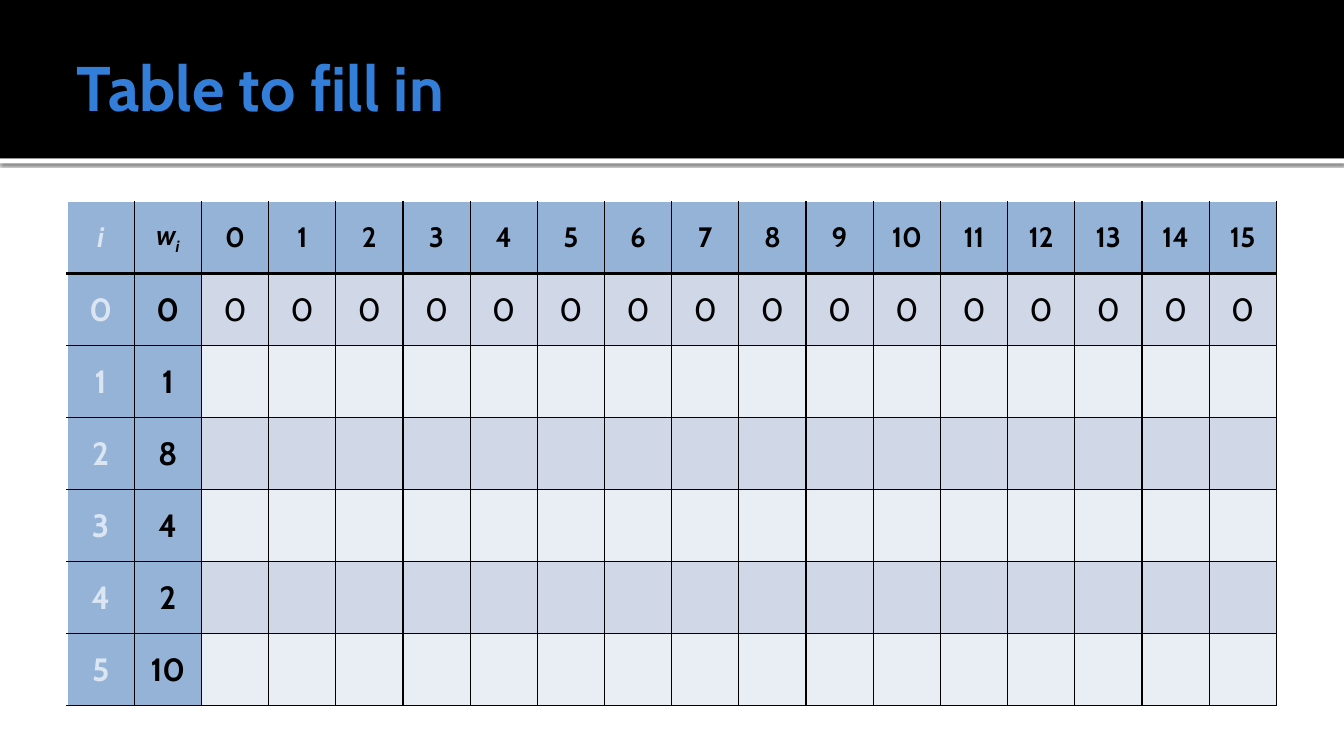
from dataclasses import dataclass
from itertools import product

from lxml.etree import SubElement
from pptx import Presentation
from pptx.dml.color import RGBColor
from pptx.enum.shapes import MSO_SHAPE
from pptx.enum.text import MSO_ANCHOR, MSO_AUTO_SIZE, PP_ALIGN
from pptx.oxml.ns import qn
from pptx.util import Cm, Pt


@dataclass(frozen=True)
class Theme:
    font: str = "Cabin"
    title: str = "337ED9"
    black: str = "000000"
    white: str = "FFFFFF"
    pale: str = "DCE6F2"
    head: str = "95B3D7"
    dark: str = "D0D8E8"
    light: str = "E9EDF4"
    big: int = 45
    body: int = 23
    label: int = 20


THEME = Theme()
WEIGHTS = [0, 1, 8, 4, 2, 10]
LIMIT = 15


def apply(target, values):
    for name, value in values.items():
        setattr(target, name, value)


def paint(fill, color):
    fill.solid()
    fill.fore_color.rgb = RGBColor.from_string(color)


def write(para, text, size, color, bold=True, italic=False):
    run = para.add_run()
    run.text = text
    apply(run.font, {"name": THEME.font, "size": Pt(size), "bold": bold, "italic": italic})
    run.font.color.rgb = RGBColor.from_string(color)
    return run


def edge(cell, side, color, width):
    line = SubElement(cell._tc.get_or_add_tcPr(), qn(f"a:ln{side}"), w=str(Pt(width)))
    fill = SubElement(line, qn("a:solidFill"))
    SubElement(fill, qn("a:srgbClr"), val=color)


def band(slide, box, color):
    shape = slide.shapes.add_shape(MSO_SHAPE.RECTANGLE, *map(Cm, box))
    shape.shadow.inherit = False
    paint(shape.fill, color)
    shape.line.fill.background()
    return shape


def shade(shape):
    glow = SubElement(
        shape._element.spPr.find(qn("a:effectLst")), qn("a:outerShdw"),
        blurRad=str(Pt(2.5)), dist=str(Pt(0.8)), dir="5400000",
        algn="tl", rotWithShape="0")
    tint = SubElement(glow, qn("a:srgbClr"), val=THEME.black)
    SubElement(tint, qn("a:alpha"), val="60000")


def header(slide, box, text):
    left, top, width, height = box
    shade(band(slide, (left, top + height, width, 0.13), THEME.white))
    band(slide, box, THEME.black)
    title = slide.shapes.title
    slide.shapes._spTree.append(title._element)
    places = (left + 1.69, top + 0.43, width - 3.39, height - 0.51)
    apply(title, dict(zip(("left", "top", "width", "height"), map(Cm, places))))
    frame = title.text_frame
    apply(frame, {
        "word_wrap": True, "auto_size": MSO_AUTO_SIZE.NONE,
        "vertical_anchor": MSO_ANCHOR.MIDDLE, "margin_left": Cm(0.25),
        "margin_right": Cm(0.13), "margin_top": Cm(0.13), "margin_bottom": Cm(0.13)})
    para = frame.paragraphs[0]
    para.alignment = PP_ALIGN.LEFT
    write(para, text, THEME.big, THEME.title)


def style(cell, row, col):
    edge(cell, "L", THEME.black if col else THEME.white, 1)
    edge(cell, "R", THEME.black, 1)
    edge(cell, "T", THEME.black if row else THEME.white, 3 if row == 1 else 1)
    edge(cell, "B", THEME.black, 1 if row else 3)
    stripe = THEME.dark if row % 2 else THEME.light
    paint(cell.fill, THEME.head if row == 0 or col < 2 else stripe)
    apply(cell, {
        "vertical_anchor": MSO_ANCHOR.MIDDLE, "margin_left": Cm(0.33),
        "margin_right": Cm(0.33), "margin_top": Cm(0.16), "margin_bottom": Cm(0.16)})


def grid(slide, box, weights, limit):
    left, top, width, height = box
    labels = ["i", "w", *map(str, range(limit + 1))]
    data = [[str(item), str(weight)] for item, weight in enumerate(weights)]
    data[0] += ["0"] * (limit + 1)
    rows, cols = len(data) + 1, len(labels)
    table = slide.shapes.add_table(rows, cols, *map(Cm, box)).table
    apply(table, {"first_row": False, "horz_banding": False})
    for column in table.columns:
        column.width = Cm(width / cols)
    for line in table.rows:
        line.height = Cm(height / rows)
    values = [labels, *data]
    for row, col in product(range(rows), range(cols)):
        cell = table.cell(row, col)
        style(cell, row, col)
        if col >= len(values[row]):
            continue
        para = cell.text_frame.paragraphs[0]
        para.alignment = PP_ALIGN.CENTER
        size = THEME.body if row else THEME.label
        color = THEME.black if col else THEME.pale
        slant = row == 0 and col < 2
        write(para, values[row][col], size, color, row == 0 or col < 2, slant)
        if slant and col:
            sub = write(para, "i", size, color, italic=True)
            sub.font._element.set("baseline", "-25000")


def main():
    deck = Presentation()
    apply(deck, {"slide_width": Cm(33.87), "slide_height": Cm(19.05)})
    slide = deck.slides.add_slide(deck.slide_layouts[5])
    paint(slide.background.fill, THEME.white)
    header(slide, (0, 0, 33.87, 3.99), "Table to fill in")
    grid(slide, (1.69, 5.08, 30.48, 12.7), WEIGHTS, LIMIT)
    deck.save("out.pptx")


if __name__ == "__main__":
    main()
